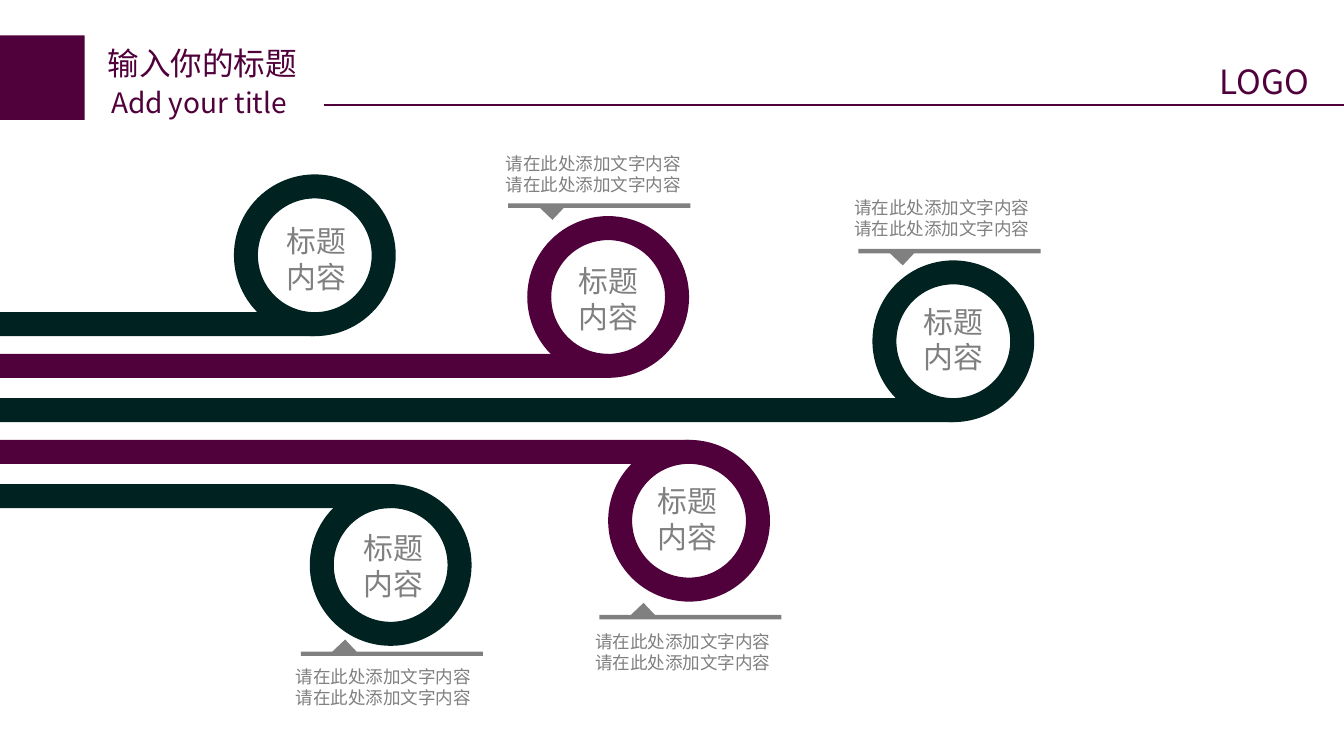
from lxml.etree import SubElement as Sub
from pptx import Presentation
from pptx.dml.color import RGBColor as RGB
from pptx.enum.shapes import MSO_CONNECTOR as LINK, MSO_SHAPE as FORM
from pptx.enum.text import MSO_ANCHOR as ANCHOR, MSO_AUTO_SIZE as FIT, PP_ALIGN as ALIGN
from pptx.oxml.ns import qn
from pptx.util import Inches, Pt

HUES = {"plum": "50003B", "pine": "002221", "gray": "808080"}
CJK = "Noto Sans CJK SC"
CELL = Inches(0.1)  # one column or row of the grid
COLS, ROWS = 106.3, 59.1
BAND, RING = 1.9, 12.8  # thickness of a band, width of a ring


def grid(*spans):
    return [round(span * CELL) for span in spans]


class Page:
    def __init__(self, deck):
        self.slide = deck.slides.add_slide(deck.slide_layouts[5])
        self.shapes = self.slide.shapes

    def paint(self, shape, hue):
        shape.shadow.inherit = False
        shape.fill.solid()
        shape.fill.fore_color.rgb = RGB.from_string(HUES[hue])
        shape.line.fill.background()
        return shape

    def block(self, form, place, hue):
        return self.paint(self.shapes.add_shape(form, *grid(*place)), hue)

    def rule(self, start, end, hue):
        line = self.shapes.add_connector(LINK.STRAIGHT, *grid(*start, *end))
        line.line.color.rgb = RGB.from_string(HUES[hue])
        line.line.width = Pt(0.75)
        Sub(line.element.spPr, qn("a:effectLst"))

    def letter(self, box, text, size, hue, font=CJK, align=ALIGN.LEFT, wrap=True):
        frame = box.text_frame
        frame.text = text
        frame.word_wrap = wrap
        frame.auto_size = FIT.NONE
        frame.vertical_anchor = ANCHOR.TOP
        frame.margin_left = frame.margin_right = Inches(0.1)
        frame.margin_top, frame.margin_bottom = Inches(0.07), Inches(0.03)
        for para in frame.paragraphs:
            para.alignment = align
            para.line_spacing = Pt(1.2 * size)
            for run in para.runs:
                run.font.size = Pt(size)
                run.font.name = font
                run.font.color.rgb = RGB.from_string(HUES[hue])
                Sub(run._r.get_or_add_rPr(), qn("a:ea")).set("typeface", CJK)

    def title(self, place, text, size, hue):
        box = self.shapes.title
        box.left, box.top, box.width, box.height = grid(*place)
        self.letter(box, text, size, hue)

    def text(self, place, text, size, hue, **style):
        self.letter(self.shapes.add_textbox(*grid(*place)), text, size, hue, **style)

    def curl(self, mid, top, side, hue, label):
        """A band from the left edge that ends in a ring above or below it."""
        self.block(FORM.RECTANGLE, (0, top, mid, BAND), hue)
        head = top + BAND - RING if side == "up" else top
        ring = self.block(FORM.DONUT, (mid - RING / 2, head, RING, RING), hue)
        ring.adjustments[0] = BAND / RING
        self.text((*label, 6.7, 6.7), "标题\n内容", 17, "gray",
                  align=ALIGN.CENTER, wrap=False)

    def note(self, left, base, side, place):
        """A thin bar with a pointer towards its ring, and its caption."""
        turn = 1 if side == "up" else -1
        edge = [(3.5, 1.3), (4.4, 0.35), (14.4, 0.35), (14.4, 0),
                (0, 0), (0, 0.35), (2.5, 0.35)]
        dots = [grid(left + x, base + turn * y) for x, y in edge]
        form = self.shapes.build_freeform(*dots[0], scale=1.0)
        form.add_line_segments(dots[1:], close=True)
        self.paint(form.convert_to_shape(), "gray")
        self.text((*place, 16.5, 4.3), "请在此处添加文字内容" * 2, 10, "gray",
                  font="Arial")


def main():
    deck = Presentation()
    deck.slide_width, deck.slide_height = grid(COLS, ROWS)
    page = Page(deck)

    # Header
    page.block(FORM.RECTANGLE, (0, 2.8, 6.7, 6.7), "plum")
    page.title((7.5, 2.8, 17.3, 4), "输入你的标题", 18, "plum")
    page.text((7.8, 6.1, 17.3, 3.7), "Add your title", 16, "plum")
    page.rule((25.6, 8.3), (COLS, 8.3), "plum")
    page.text((95.5, 4.1, 9.6, 4.2), "LOGO", 19, "plum", wrap=False)

    # Bands with rings: middle of ring, top of band, side, colour, label corner
    for curl in [
        (24.9, 24.7, "up", "pine", (21.7, 16.9)),
        (48.1, 28, "up", "plum", (44.8, 20.1)),
        (75.4, 31.5, "up", "pine", (72.1, 23.3)),
        (54.5, 34.8, "down", "plum", (51, 37.5)),
        (30.9, 38.3, "down", "pine", (27.8, 41.2)),
    ]:
        page.curl(*curl)

    # Captions: left and outer edge of bar, side, text corner
    for note in [
        (40.2, 16.1, "up", (39, 11.4)),
        (67.9, 19.7, "up", (66.6, 14.9)),
        (47.4, 49, "down", (46.1, 49.2)),
        (23.8, 51.9, "down", (22.4, 52)),
    ]:
        page.note(*note)

    deck.save("out.pptx")


if __name__ == "__main__":
    main()
